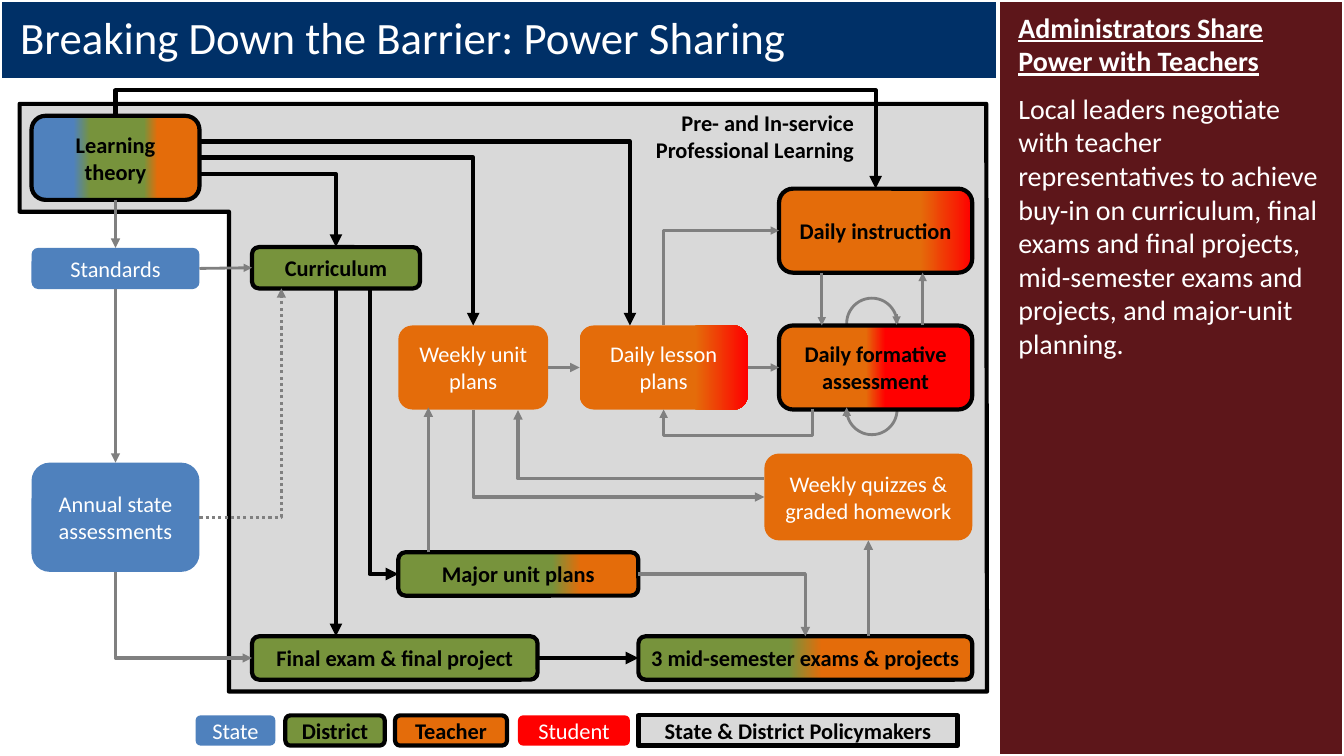
from lxml import etree
from pptx import Presentation
from pptx.dml.color import RGBColor
from pptx.enum.dml import MSO_LINE
from pptx.enum.shapes import MSO_CONNECTOR, MSO_SHAPE
from pptx.enum.text import MSO_ANCHOR, PP_ALIGN
from pptx.oxml.ns import qn
from pptx.util import Pt

HUES = {
    "navy": "003067", "maroon": "5D161A", "white": "FFFFFF", "black": "000000",
    "panel": "D9D9D9", "gray": "808080", "state": "4F81BD",
    "district": "77933C", "teacher": "E46C0A", "student": "FF0000",
}
RGB = {name: RGBColor.from_string(code) for name, code in HUES.items()}

deck = Presentation()
deck.slide_width, deck.slide_height = Pt(960), Pt(540)
slide = deck.slides.add_slide(deck.slide_layouts[6])
shapes = slide.shapes


def style(shape, fill, edge, size, hue, bold, align, anchor):
    """Set fill, outline and text look; a list of stops makes a gradient."""
    shape.shadow.inherit = False
    if isinstance(fill, str):
        shape.fill.solid()
        shape.fill.fore_color.rgb = RGB[fill]
    else:
        shape.fill.gradient()
        shape.fill.gradient_angle = 0
        stops = shape.fill._fill._gradFill.find(qn("a:gsLst"))
        for old in list(stops):
            stops.remove(old)
        for place, name in fill:
            stop = etree.SubElement(stops, qn("a:gs"), pos=str(place * 1000))
            etree.SubElement(stop, qn("a:srgbClr"), val=HUES[name])
    if edge:
        shape.line.color.rgb = RGB[edge]
        shape.line.width = Pt(3)
    else:
        shape.line.fill.background()
    frame = shape.text_frame
    frame.word_wrap = True
    frame.vertical_anchor = anchor
    for para in frame.paragraphs:
        para.alignment = align
        for run in para.runs:
            font = run.font
            font.name, font.size, font.bold = "Calibri", Pt(size), bold
            font.color.rgb = RGB[hue]


def arrow(link, hue, width, start, end, tip="tailEnd"):
    """Colour a connector, add its arrowhead and join it to boxes."""
    link.line.color.rgb = RGB[hue]
    link.line.width = Pt(width)
    etree.SubElement(link.line._get_or_add_ln(), qn("a:" + tip), type="triangle")
    etree.SubElement(link._element.spPr, qn("a:effectLst"))
    if start:
        link.begin_connect(boxes[start[0]], start[1])
    if end:
        link.end_connect(boxes[end[0]], end[1])


# Title bar
title = shapes.add_shape(MSO_SHAPE.RECTANGLE, 0, 0, Pt(960), Pt(57.6))
title.text_frame.text = "Breaking Down the Barrier: Power Sharing"
style(title, "navy", "white", 32, "white", False, PP_ALIGN.LEFT, MSO_ANCHOR.MIDDLE)
title.text_frame.margin_left = title.text_frame.margin_right = Pt(14.4)
title.text_frame.paragraphs[0].line_spacing = 0.9

# Policymaker panel
build = shapes.build_freeform(Pt(14), Pt(74.25))
build.add_line_segments([(Pt(x), Pt(y)) for x, y in (
    (704.5, 74.25), (705, 494), (163.5, 494), (163.5, 151.25), (14, 151.25))])
panel = build.convert_to_shape()
panel.text_frame.text = "Pre- and In-service\nProfessional Learning"
style(panel, "panel", "black", 16, "black", True, PP_ALIGN.RIGHT, MSO_ANCHOR.TOP)
panel.text_frame.margin_right = Pt(95)

# Loops behind the formative box
for top in (213, 274.5):
    loop = shapes.add_shape(MSO_SHAPE.OVAL, Pt(604.8), Pt(top), Pt(36), Pt(36))
    loop.shadow.inherit = False
    loop.fill.background()
    loop.line.color.rgb = RGB["gray"]
    loop.line.width = Pt(2)

# Boxes and legend: text, left, top, width, height, fill, strong
learn = [(0, "state"), (25, "state"), (35, "district"), (67, "district"),
         (75, "teacher"), (100, "teacher")]
major = [(0, "district"), (64, "district"), (76, "teacher"), (100, "teacher")]
mid = [(0, "district"), (45, "district"), (55, "teacher"), (100, "teacher")]
form = [(0, "teacher"), (45, "teacher"), (55, "student"), (100, "student")]
lesson = [(0, "teacher"), (69, "teacher"), (100, "student")]
daily = [(0, "teacher"), (73, "teacher"), (100, "student")]
items = {
    "learn": ("Learning theory", 22.5, 82.75, 120, 60, learn, True),
    "standard": ("Standards", 22.5, 177, 120, 29.5, "state", False),
    "annual": ("Annual state assessments", 22.5, 330.5, 120, 78, "state", False),
    "course": ("Curriculum", 180, 176.5, 120, 29.5, "district", True),
    "week": ("Weekly unit plans", 284.5, 232.5, 107, 60, "teacher", False),
    "lesson": ("Daily lesson plans", 414, 232.5, 120, 60, lesson, False),
    "daily": ("Daily instruction", 556.5, 134.75, 138, 60, daily, True),
    "form": ("Daily formative assessment", 556.5, 232.5, 138, 60, form, True),
    "quiz": ("Weekly quizzes & graded homework", 546, 324, 148.5, 62, "teacher", False),
    "major": ("Major unit plans", 284.5, 394.5, 171.5, 31, major, True),
    "final": ("Final exam & final project", 180, 454.5, 204, 31, "district", True),
    "mid": ("3 mid-semester exams & projects", 456, 454.5, 238.5, 31, mid, True),
    "key1": ("State", 139.7, 511, 57, 21.6, "state", False),
    "key2": ("District", 203.8, 511, 71, 21.6, "district", True),
    "key3": ("Teacher", 282.2, 511, 80, 21.6, "teacher", True),
    "key4": ("Student", 370, 511, 80, 21.6, "student", False),
    "key5": ("State & District Policymakers", 456, 511, 228, 21.6, "panel", True),
}
boxes = {}
for name, (text, left, top, width, height, fill, strong) in items.items():
    form_type = MSO_SHAPE.RECTANGLE if name == "key5" else MSO_SHAPE.ROUNDED_RECTANGLE
    box = shapes.add_shape(form_type, Pt(left), Pt(top), Pt(width), Pt(height))
    box.text_frame.text = text
    style(box, fill, "black" if strong else None, 16, "black" if strong else "white",
          strong, PP_ALIGN.CENTER, MSO_ANCHOR.MIDDLE)
    boxes[name] = box
boxes["week"].text_frame.margin_left = boxes["week"].text_frame.margin_right = 0

# Straight arrows: from, to, colour, width, joined sides
for x1, y1, x2, y2, hue, width, start, end in (
    (604.8, 298, 604.8, 291, "gray", 2, None, None),
    (640.4, 224.6, 640.4, 232, "gray", 2, None, None),
    (82.5, 142.75, 82.5, 177, "gray", 2.25, ("learn", 2), ("standard", 0)),
    (82.5, 206.5, 82.5, 330.5, "gray", 2.25, ("standard", 2), ("annual", 0)),
    (142.5, 191.5, 180, 191.5, "gray", 2, ("standard", 3), ("course", 1)),
    (534, 262.5, 556.5, 262.5, "gray", 2, ("lesson", 3), ("form", 1)),
    (391.5, 262.5, 414, 262.5, "gray", 2.25, ("week", 3), ("lesson", 1)),
    (587, 194.75, 587, 232.5, "gray", 2, None, None),
    (659, 232.5, 659, 194.75, "gray", 2, None, None),
    (306, 394.5, 306, 291, "gray", 2.25, None, None),
    (620.25, 454.5, 620.25, 386, "gray", 2.25, None, ("quiz", 2)),
    (240, 206, 240, 454.5, "black", 3, ("course", 2), None),
    (384, 470, 456, 470, "black", 3, ("final", 3), ("mid", 1)),
):
    link = shapes.add_connector(MSO_CONNECTOR.STRAIGHT, Pt(x1), Pt(y1), Pt(x2), Pt(y2))
    arrow(link, hue, width, start, end)

# Bent arrows: from, to, turn, flip, bend type, bend places, colour, width, joined sides
for x1, y1, x2, y2, turn, flip, bend, places, hue, width, start, end in (
    (264, 206, 284.5, 410, 270, "H", 2, (), "black", 3, None, ("major", 1)),
    (474, 232.5, 556.5, 164.75, 90, "HV", 2, (), "gray", 2, ("lesson", 0), ("daily", 1)),
    (580.5, 292, 474, 292.5, 180, "V", 4, (0, 37), "gray", 2, None, ("lesson", 2)),
    (82.5, 408.5, 180, 470, 270, "H", 2, (), "gray", 2.25, ("annual", 2), ("final", 1)),
    (370, 293, 546, 342, 0, "", 3, (0,), "gray", 2.25, None, None),
    (142.5, 369.5, 201, 206, 0, "V", 2, (), "gray", 2.25, ("annual", 3), None),
    (456, 410, 575.25, 454.5, 0, "", 2, (), "gray", 2.25, ("major", 3), ("mid", 0)),
    (338, 292.5, 546, 355, 270, "H", 2, (), "gray", 2.25, ("week", 2), ("quiz", 1)),
    (142.5, 101, 450, 232.5, 0, "", 3, (1,), "black", 3, None, None),
    (142.5, 112.5, 338, 232.5, 0, "", 2, (), "black", 3, None, ("week", 0)),
    (142.5, 124.5, 240, 176.5, 0, "", 2, (), "black", 3, None, ("course", 0)),
    (82.5, 82.75, 625.5, 134.75, 270, "H", 3, (-0.35,), "black", 3,
     ("learn", 0), ("daily", 0)),
):
    link = shapes.add_connector(MSO_CONNECTOR.ELBOW, Pt(x1), Pt(y1), Pt(x2), Pt(y2))
    back = (x1, y1) == (370, 293)
    arrow(link, hue, width, start, end, "headEnd" if back else "tailEnd")
    if flip == "V" and turn == 0:
        link.line.dash_style = MSO_LINE.ROUND_DOT
    # A quarter turn swaps the frame's sides about its centre
    wide, high = abs(x2 - x1), abs(y2 - y1)
    if turn in (90, 270):
        wide, high = high, wide
    link.left, link.top = Pt((x1 + x2 - wide) / 2), Pt((y1 + y2 - high) / 2)
    link.width, link.height = Pt(wide), Pt(high)
    link.rotation = turn
    props = link._element.spPr
    for axis in "HV":
        props.find(qn("a:xfrm")).set("flip" + axis, str(int(axis in flip)))
    geom = props.find(qn("a:prstGeom"))
    geom.set("prst", f"bentConnector{bend}")
    for num, place in enumerate(places, 1):
        etree.SubElement(geom.find(qn("a:avLst")), qn("a:gd"), name=f"adj{num}",
                         fmla=f"val {round(place * 100000)}")

# Side panel
side = shapes.add_shape(MSO_SHAPE.RECTANGLE, Pt(713), 0, Pt(247), Pt(540))
frame = side.text_frame
frame.text = (
    "Administrators Share Power with Teachers\n"
    "Local leaders negotiate with teacher representatives to achieve buy-in on "
    "curriculum, final exams and final projects, mid-semester exams and projects, "
    "and major-unit planning.")
style(side, "maroon", "white", 20, "white", False, PP_ALIGN.LEFT, MSO_ANCHOR.TOP)
frame.margin_left = frame.margin_right = Pt(14.4)
frame.margin_top = Pt(7.2)
head, body = frame.paragraphs
head.runs[0].font.bold = head.runs[0].font.underline = True
body.space_before = Pt(10)

deck.save("out.pptx")
